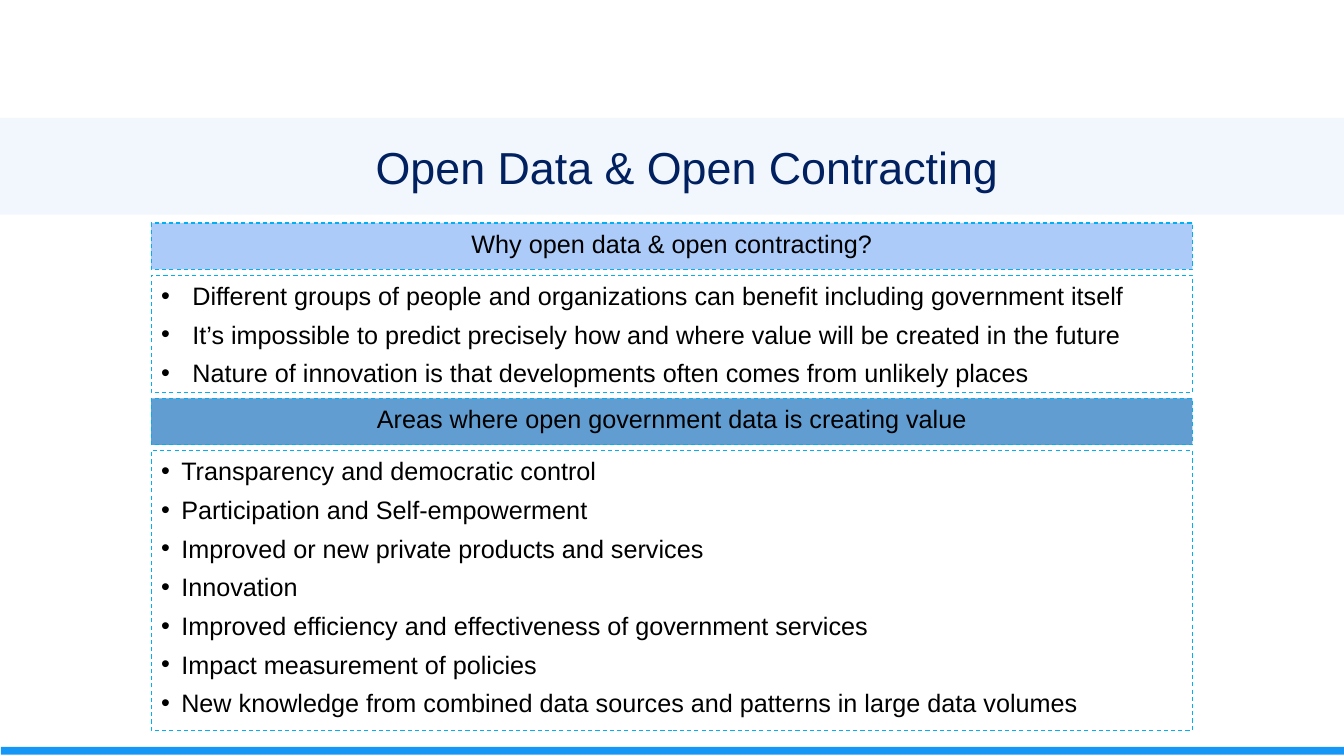
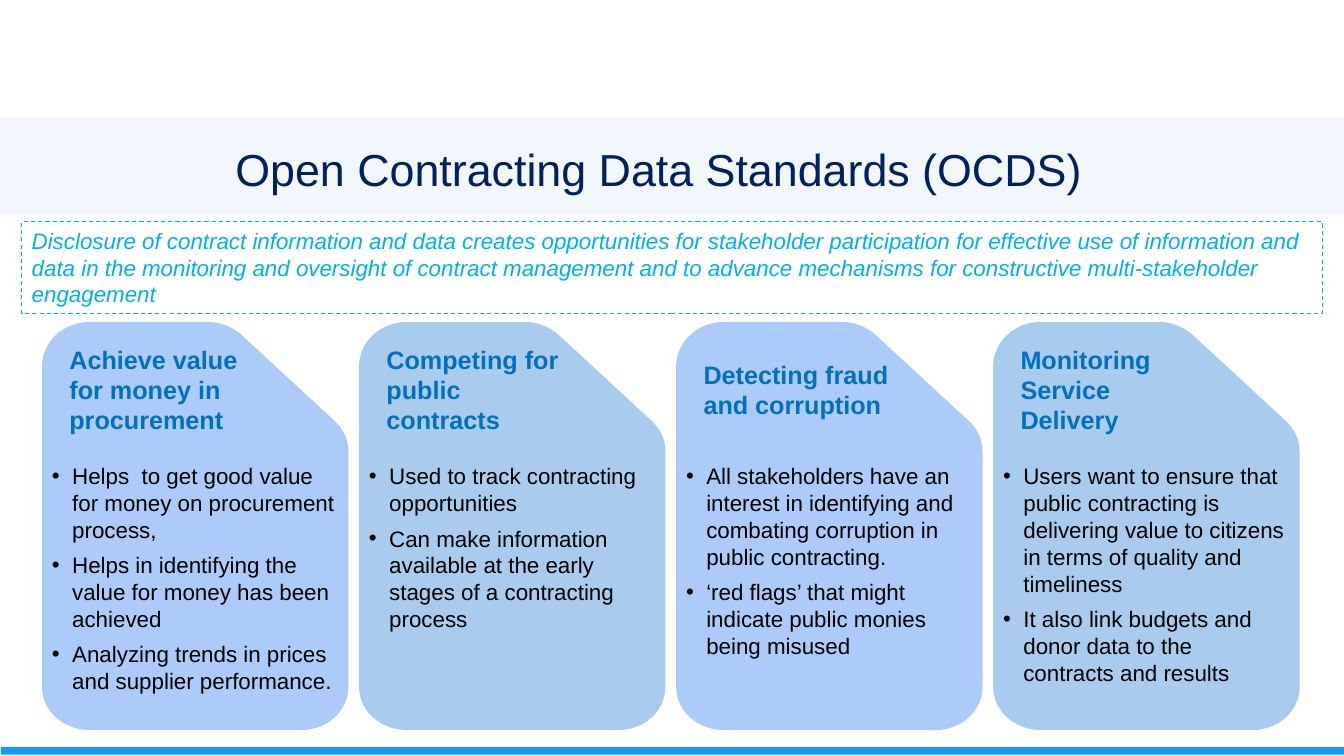
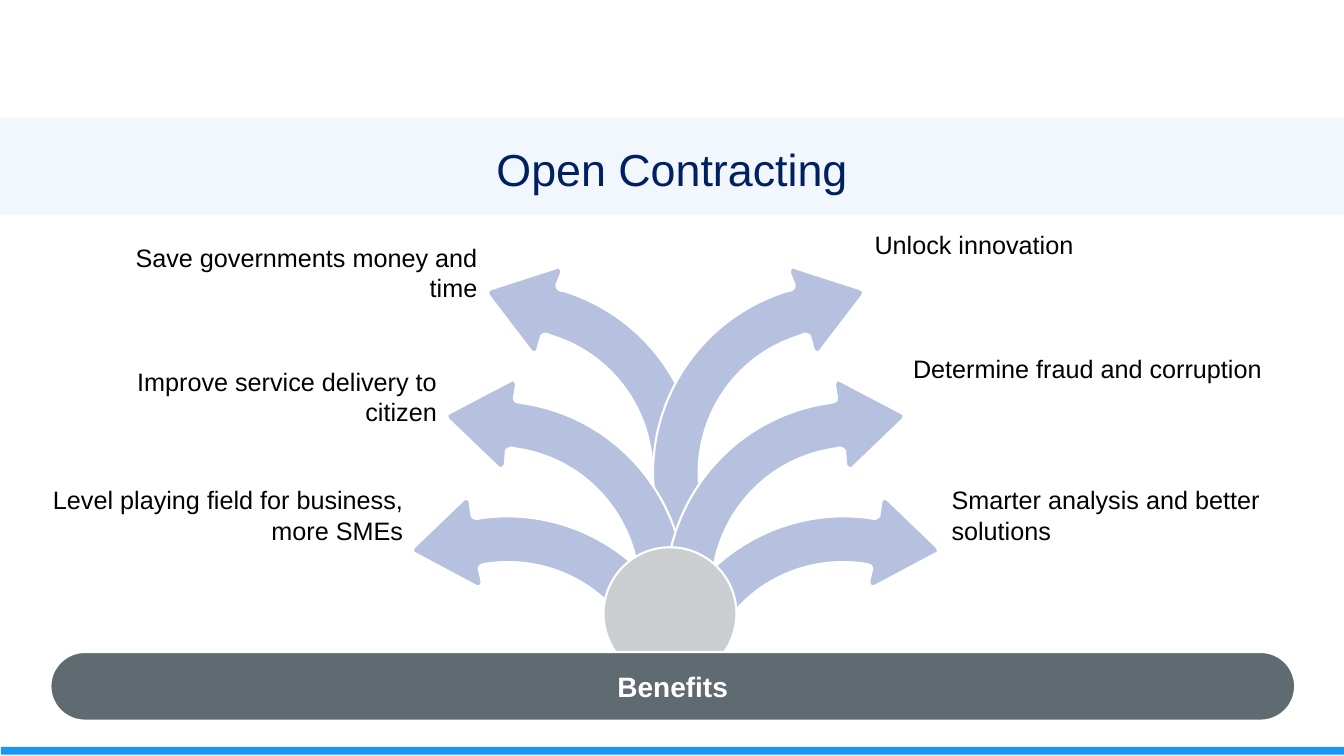
from lxml import etree
from pptx import Presentation
from pptx.dml.color import RGBColor
from pptx.enum import dml, shapes, text
from pptx.oxml import ns
from pptx.util import Cm, Pt

HUE = {
    "navy": "002060", "sky": "00B0F0", "blue": "0070C0", "foot": "1697F5",
    "pale": "ACCBF9", "mid": "629DD1", "ice": "A9CCEE", "arrow": "B5C1DF",
    "hub": "CACED0", "slate": "606B71", "white": "FFFFFF", "black": "000000",
}
FONT = "Arial"
UNIT = 0.0254  # cm in one step of an outline

# Slide 1: bars and lists, from top to bottom
DATA = {
    "title": ("Open Data & Open Contracting", (4.34, 2.67, 25.96, 2.39)),
    "rows": [
        (1.17, "pale", 0, ["Why open data & open contracting?"]),
        (2.95, "white", 0.79, [
            "Different groups of people and organizations can benefit including government itself",
            "It’s impossible to predict precisely how and where value will be created in the future",
            "Nature of innovation is that developments often comes from unlikely places",
        ]),
        (1.17, "mid", 0, ["Areas where open government data is creating value"]),
        (7.04, "white", 0.51, [
            "Transparency and democratic control",
            "Participation and Self-empowerment",
            "Improved or new private products and services",
            "Innovation",
            "Improved efficiency and effectiveness of government services",
            "Impact measurement of policies",
            "New knowledge from combined data sources and patterns in large data volumes",
        ]),
    ],
}

# Slide 2: four cards under a statement
OCDS = {
    "title": ("Open Contracting Data Standards (OCDS)", (5.61, 2.72, 22, 2.39)),
    "intro": "Disclosure of contract information and data creates opportunities for "
             "stakeholder participation for effective use of information and data in the "
             "monitoring and oversight of contract management and to advance mechanisms "
             "for constructive multi-stakeholder engagement",
    "cards": [
        ("Achieve value for money in procurement", [
            "Helps  to get good value for money on procurement process,",
            "Helps in identifying the value for money has been achieved",
            "Analyzing trends in prices and supplier performance.",
        ]),
        ("Competing for public contracts", [
            "Used to track contracting opportunities",
            "Can make information available at the early stages of a contracting process",
        ]),
        ("Detecting fraud and corruption", [
            "All stakeholders have an interest in identifying and combating corruption "
            "in public contracting.",
            "‘red flags’ that might indicate public monies being misused",
        ]),
        ("Monitoring Service Delivery", [
            "Users want to ensure that public contracting is delivering value to citizens "
            "in terms of quality and timeliness",
            "It also link budgets and donor data to the contracts and results",
        ]),
    ],
}

# Slide 3: arrows that fan out from a hub
GAIN = {
    "title": ("Open Contracting", (5.84, 2.71, 22.2, 2.39)),
    "left": [
        ("Save governments money and time", 2.53, 5.97),
        ("Improve service delivery to citizen", 1.51, 9.1),
        ("Level playing field for business, more SMEs", 0.66, 12.09),
    ],
    "right": [
        ("Unlock innovation", 21.79, 5.66),
        ("Determine fraud and corruption", 22.76, 8.79),
        ("Smarter analysis and better solutions", 23.73, 12.09),
    ],
    "bar": "Benefits",
}

# Outlines: two numbers make a line, six a curve
CARD = [
    (164, 0), (48, 0), (21, 0, 0, 20, 0, 44), (0, 362),
    (0, 386, 21, 405, 48, 405), (257, 405), (283, 405, 304, 386, 304, 362),
    (304, 129), (304, 117, 299, 106, 290, 98), (198, 13),
    (189, 5, 177, 0, 164, 0),
]
ARROWS = [
    [(554, 265), (556, 266, 557, 268, 557, 270), (552, 283),
     (552, 285, 553, 287, 555, 288), (560, 289), (659, 320, 715, 425, 684, 524),
     (684, 527), (636, 527), (638, 522, 639, 517, 641, 511),
     (664, 435, 622, 356, 547, 333), (542, 331), (540, 331, 538, 332, 537, 333),
     (533, 347), (532, 350, 528, 350, 527, 348), (485, 293),
     (483, 291, 484, 288, 487, 287), (552, 266)],
    [(509, 377), (511, 378, 512, 379, 512, 382), (510, 395),
     (510, 397, 511, 399, 513, 399), (518, 400), (621, 415, 692, 510, 678, 613),
     (632, 613), (633, 607), (644, 528, 590, 456, 512, 445), (507, 444),
     (505, 444, 503, 446, 502, 447), (501, 461), (500, 464, 496, 466, 494, 463),
     (445, 416), (443, 414, 443, 411, 446, 410), (507, 378)],
    [(462, 495), (464, 494, 466, 496, 466, 498), (468, 512),
     (469, 513, 470, 515, 473, 515), (478, 514), (568, 502, 651, 555, 681, 637),
     (681, 639), (632, 639), (626, 627), (598, 579, 543, 551, 484, 559),
     (479, 560), (477, 560, 475, 562, 475, 564), (478, 577),
     (478, 581, 475, 583, 472, 581), (412, 549), (409, 548, 409, 545, 411, 543),
     (460, 496)],
]
SPAN = 1340.5  # left plus right edge of a mirrored pair


def tint(name):
    return RGBColor.from_string(HUE[name])


def write(shape, lines, size=18, hue="black", bold=False, slant=False,
          align="LEFT", anchor="TOP", dent=0, gap=6, lead=None):
    """Fill a shape with paragraphs; dent adds hanging bullets."""
    frame = shape.text_frame
    frame.word_wrap = True
    frame.auto_size = text.MSO_AUTO_SIZE.NONE
    frame.vertical_anchor = text.MSO_ANCHOR[anchor]
    for i, line in enumerate(lines):
        para = frame.add_paragraph() if i else frame.paragraphs[0]
        if dent:
            props = para._p.get_or_add_pPr()
            props.set("marL", str(Cm(dent)))
            props.set("indent", str(-Cm(dent)))
            etree.SubElement(props, ns.qn("a:buFont")).set("typeface", FONT)
            etree.SubElement(props, ns.qn("a:buChar")).set("char", "•")
        para.alignment = text.PP_ALIGN[align]
        if i:
            para.space_before = Pt(gap)
        if lead:
            para.line_spacing = Pt(lead)
        run = para.add_run()
        run.text = line
        font = run.font
        font.name, font.size = FONT, Pt(size)
        font.bold, font.italic = bold, slant
        font.color.rgb = tint(hue)


def paint(shape, fill=None, line=None, width=0.75, dash=False):
    shape.shadow.inherit = False
    if fill:
        shape.fill.solid()
        shape.fill.fore_color.rgb = tint(fill)
    else:
        shape.fill.background()
    if line:
        shape.line.color.rgb = tint(line)
        shape.line.width = Pt(width)
        if dash:
            shape.line.dash_style = dml.MSO_LINE.DASH
    else:
        shape.line.fill.background()
    return shape


def block(slide, box, kind="RECTANGLE", **look):
    form = shapes.MSO_SHAPE[kind]
    return paint(slide.shapes.add_shape(form, *map(Cm, box)), **look)


def label(slide, box, lines, **form):
    write(slide.shapes.add_textbox(*map(Cm, box)), lines, **form)


def outline(slide, moves, left=0, top=0, flip=False, **look):
    """Draw the corners, then bend the sides that are curves."""
    paths = [[(Cm(left + UNIT * (SPAN - x if flip else x)), Cm(top + UNIT * y))
              for x, y in zip(move[::2], move[1::2])] for move in moves]
    pen = slide.shapes.build_freeform(*paths[0][0])
    pen.add_line_segments([dots[-1] for dots in paths[1:]], close=True)
    shape = pen.convert_to_shape()
    sides = shape.element.findall(".//" + ns.qn("a:lnTo"))
    for side, dots in zip(sides, paths[1:]):
        if len(dots) == 3:
            side.tag = ns.qn("a:cubicBezTo")
            for n, (x, y) in enumerate(dots[:2]):
                knot = etree.Element(ns.qn("a:pt"))
                knot.set("x", str(x - shape.left))
                knot.set("y", str(y - shape.top))
                side.insert(n, knot)
    return paint(shape, **look)


def start(deck, title):
    """Add a slide with its formatted title."""
    words, box = title
    slide = deck.slides.add_slide(deck.slide_layouts[5])
    head = slide.shapes.title
    head.left, head.top, head.width, head.height = map(Cm, box)
    write(head, [words], size=32, hue="navy", align="CENTER", anchor="MIDDLE", lead=57.6)
    return slide


def share(slide):
    """Put the band and the foot strip on the layout."""
    foot = block(slide, (0.02, 18.82, 33.93, 0.2), fill="foot")
    band = block(slide, (0, 2.97, 33.87, 2.44), fill="pale")
    shade = band.element.find(".//" + ns.qn("a:srgbClr"))
    etree.SubElement(shade, ns.qn("a:alpha")).set("val", "15000")
    for part in (band, foot):
        slide.slide_layout.shapes.element.insert(2, part.element)


def data(deck):
    slide = start(deck, DATA["title"])
    share(slide)
    top = 5.62
    for high, fill, dent, lines in DATA["rows"]:
        row = block(slide, (3.81, top, 26.24, high), fill=fill, line="sky", dash=True)
        write(row, lines, dent=dent, align="LEFT" if dent else "CENTER")
        top += high + 0.15


def ocds(deck):
    slide = start(deck, OCDS["title"])
    intro = block(slide, (0.55, 5.59, 32.77, 2.31), line="sky", dash=True)
    write(intro, [OCDS["intro"]], size=16, hue="sky", slant=True)
    for i, (head, lines) in enumerate(OCDS["cards"]):
        left = 1.06 + 7.99 * i
        outline(slide, CARD, left, 8.11, fill=("pale", "ice")[i % 2])
        label(slide, (left, 11.53, 7.67, 6.32), lines, size=16, dent=0.51)
        label(slide, (left + 0.44, 8.54, 5.23, 2.54), [head],
              hue="blue", bold=True, anchor="MIDDLE")


def gain(deck):
    slide = start(deck, GAIN["title"])
    for moves in ARROWS:
        for flip in (False, True):
            outline(slide, moves, flip=flip, fill="arrow", line="white", width=1.5)
    for side in ("left", "right"):
        align = "RIGHT" if side == "left" else "LEFT"
        for words, left, top in GAIN[side]:
            label(slide, (left, top, 9.75, 1.8), [words], align=align)
    block(slide, (15.21, 13.79, 3.35, 3.35), "OVAL", fill="hub", line="white", width=1.5)
    bar = block(slide, (1.27, 16.43, 31.37, 1.73), "ROUNDED_RECTANGLE",
                fill="slate", line="white", width=1.5)
    bar.adjustments[0] = 0.5
    write(bar, [GAIN["bar"]], size=20, hue="white", bold=True,
          align="CENTER", anchor="MIDDLE")


def main():
    deck = Presentation()
    deck.slide_width, deck.slide_height = Cm(33.87), Cm(19.05)
    for build in (data, ocds, gain):
        build(deck)
    deck.save("out.pptx")


if __name__ == "__main__":
    main()
